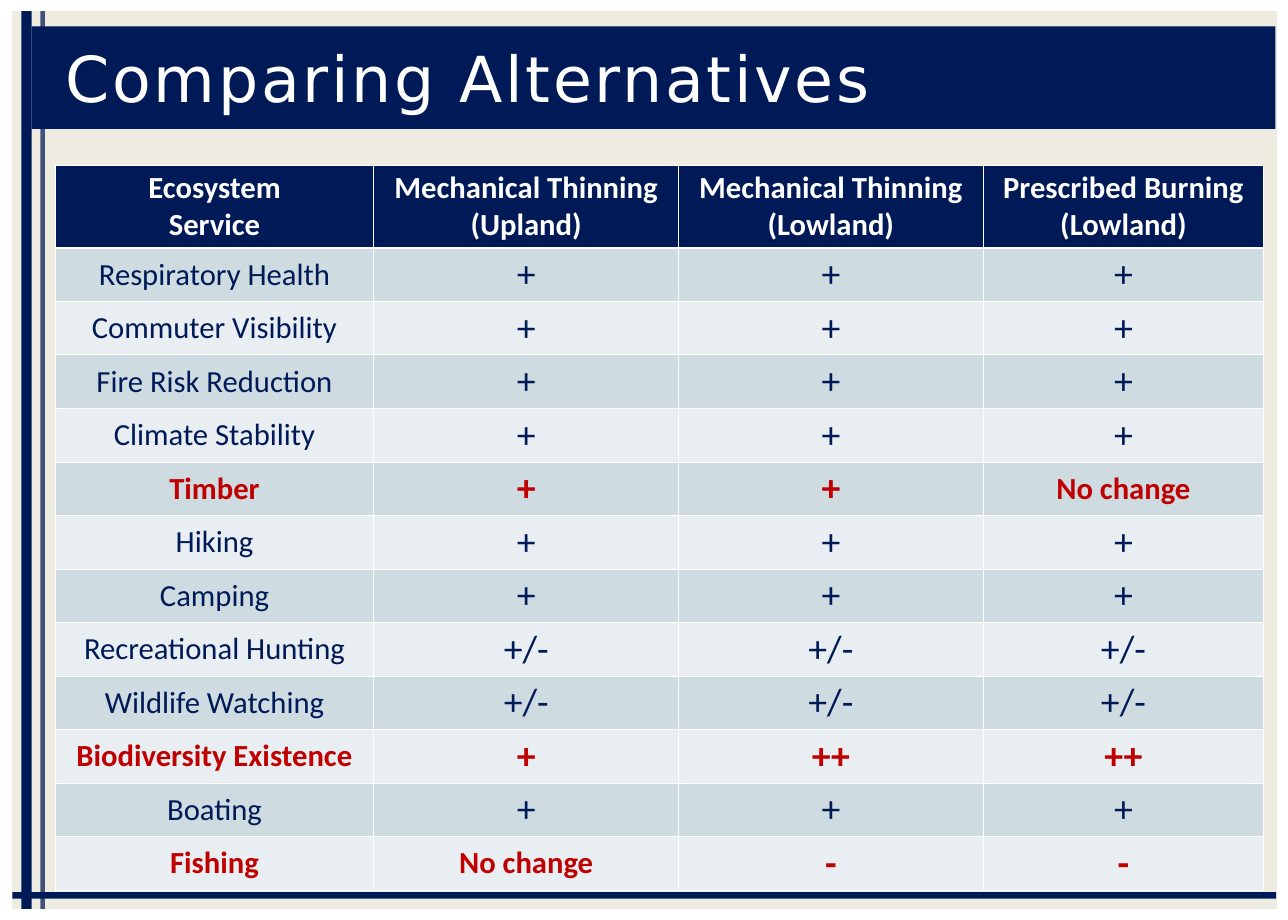
import pptx
import pptx.dml.color
import pptx.enum.shapes
import pptx.enum.text
import pptx.oxml
import pptx.oxml.ns
import pptx.util

NAVY, RED, WHITE, CREAM = "001A57", "C00000", "FFFFFF", "EEECE1"
BANDS = ["CEDCE1", "E8EEF1"]
COLUMNS = [433, 414, 414, 381]
HEADERS = [
    ["Ecosystem", "Service"],
    ["Mechanical Thinning", "(Upland)"],
    ["Mechanical Thinning", "(Lowland)"],
    ["Prescribed Burning", "(Lowland)"],
]
SERVICES = [
    ["Respiratory Health", "+", "+", "+"],
    ["Commuter Visibility", "+", "+", "+"],
    ["Fire Risk Reduction", "+", "+", "+"],
    ["Climate Stability", "+", "+", "+"],
    ["Timber", "+", "+", "No change"],
    ["Hiking", "+", "+", "+"],
    ["Camping", "+", "+", "+"],
    ["Recreational Hunting", "+/-", "+/-", "+/-"],
    ["Wildlife Watching", "+/-", "+/-", "+/-"],
    ["Biodiversity Existence", "+", "++", "++"],
    ["Boating", "+", "+", "+"],
    ["Fishing", "No change", "-", "-"],
]
HIGHLIGHTED = {"Timber", "Biodiversity Existence", "Fishing"}


def px(value):
    return pptx.util.Emu(value * 9144)


def color(value):
    return pptx.dml.color.RGBColor.from_string(value)


class SlideBuilder:
    """Adds styled elements to the current slide."""

    def __init__(self, slide):
        self.slide = slide
        self.title_font = "DejaVu Sans"
        self.table_font = "Calibri"

    def add_text(self, paragraph, text, size, font, ink, bold=False):
        run = paragraph.add_run()
        run.text = text
        run.font.size = pptx.util.Pt(size)
        run.font.name = font
        run.font.bold = bold
        run.font.color.rgb = color(ink)
        return run

    def bar(self, left, top, width, height, fill, outlined=False):
        shape = self.slide.shapes.add_shape(
            pptx.enum.shapes.MSO_SHAPE.RECTANGLE, px(left), px(top), px(width), px(height))
        shape.shadow.inherit = False
        shape.fill.solid()
        shape.fill.fore_color.rgb = color(fill)
        if outlined:
            shape.line.color.rgb = color(fill)
            shape.line.width = pptx.util.Pt(1)
        else:
            shape.line.fill.background()

    def rule(self, x, start, end, ink, width, opacity):
        line = self.slide.shapes.add_connector(
            pptx.enum.shapes.MSO_CONNECTOR.STRAIGHT, px(x), px(start), px(x), px(end))
        line.line.color.rgb = color(ink)
        line.line.width = pptx.util.Pt(width)
        properties = line.element.spPr
        tint = properties.find(".//" + pptx.oxml.ns.qn("a:srgbClr"))
        alpha = tint.makeelement(pptx.oxml.ns.qn("a:alpha"), {"val": str(opacity * 1000)})
        tint.append(alpha)
        properties.append(properties.makeelement(pptx.oxml.ns.qn("a:effectLst"), {}))

    def title(self, text, left, top, width, height):
        shape = self.slide.shapes.title
        shape.element.getparent().append(shape.element)
        shape.left, shape.top = px(left), px(top)
        shape.width, shape.height = px(width), px(height)
        shape.fill.solid()
        shape.fill.fore_color.rgb = color(NAVY)
        frame = shape.text_frame
        frame.auto_size = pptx.enum.text.MSO_AUTO_SIZE.NONE
        frame.word_wrap = True
        frame.vertical_anchor = pptx.enum.text.MSO_ANCHOR.MIDDLE
        frame.margin_left = frame.margin_right = px(17)
        frame.margin_top = frame.margin_bottom = px(9)
        paragraph = frame.paragraphs[0]
        paragraph.alignment = pptx.enum.text.PP_ALIGN.LEFT
        run = self.add_text(paragraph, text, 62, self.title_font, WHITE)
        run.font._element.set("spc", "260")

    def borders(self, cell, top, bottom):
        properties = cell._tc.get_or_add_tcPr()
        for side, width in (("L", 1), ("R", 1), ("T", top), ("B", bottom)):
            properties.append(pptx.oxml.parse_xml(
                f'<a:ln{side} {pptx.oxml.ns.nsdecls("a")} w="{width * 12700}">'
                f'<a:solidFill><a:srgbClr val="{WHITE}"/></a:solidFill></a:ln{side}>'))

    def cell(self, cell, lines, fill, ink, bold, top=1, bottom=1):
        self.borders(cell, top, bottom)
        cell.fill.solid()
        cell.fill.fore_color.rgb = color(fill)
        cell.vertical_anchor = pptx.enum.text.MSO_ANCHOR.MIDDLE
        cell.margin_left = cell.margin_right = px(10)
        cell.margin_top = cell.margin_bottom = px(5)
        frame = cell.text_frame
        for index, text in enumerate(lines):
            paragraph = frame.add_paragraph() if index else frame.paragraphs[0]
            paragraph.alignment = pptx.enum.text.PP_ALIGN.CENTER
            size = 37 if set(text) <= set("+-/") else 30
            self.add_text(paragraph, text, size, self.table_font, ink, bold)

    def table(self, left, top, header_height, row_height):
        height = header_height + row_height * len(SERVICES)
        table = self.slide.shapes.add_table(
            len(SERVICES) + 1, len(COLUMNS), px(left), px(top), px(sum(COLUMNS)), px(height)).table
        table.horz_banding = False
        for column, width in zip(table.columns, COLUMNS):
            column.width = px(width)
        for row in table.rows:
            row.height = px(row_height)
        table.rows[0].height = px(header_height)
        for column, lines in enumerate(HEADERS):
            self.cell(table.cell(0, column), lines, NAVY, WHITE, True, bottom=3)
        for row, service in enumerate(SERVICES):
            highlighted = service[0] in HIGHLIGHTED
            for column, text in enumerate(service):
                self.cell(table.cell(row + 1, column), [text], BANDS[row % 2],
                          RED if highlighted else NAVY, highlighted, top=1 if row else 3)


def main():
    presentation = pptx.Presentation()
    presentation.slide_width, presentation.slide_height = px(1750), px(1250)
    builder = SlideBuilder(presentation.slides.add_slide(presentation.slide_layouts[5]))
    builder.bar(17, 15, 1717, 1220, CREAM, outlined=True)
    builder.bar(29, 15, 14, 1220, NAVY)
    builder.bar(43, 36, 29, 139, NAVY)
    builder.bar(17, 1212, 1717, 9, NAVY)
    builder.rule(58, 1235, 15, NAVY, 4.5, 73)
    builder.title("Comparing Alternatives", 72, 36, 1661, 139)
    builder.table(75, 225, 110, 71)
    presentation.save("out.pptx")


if __name__ == "__main__":
    main()
